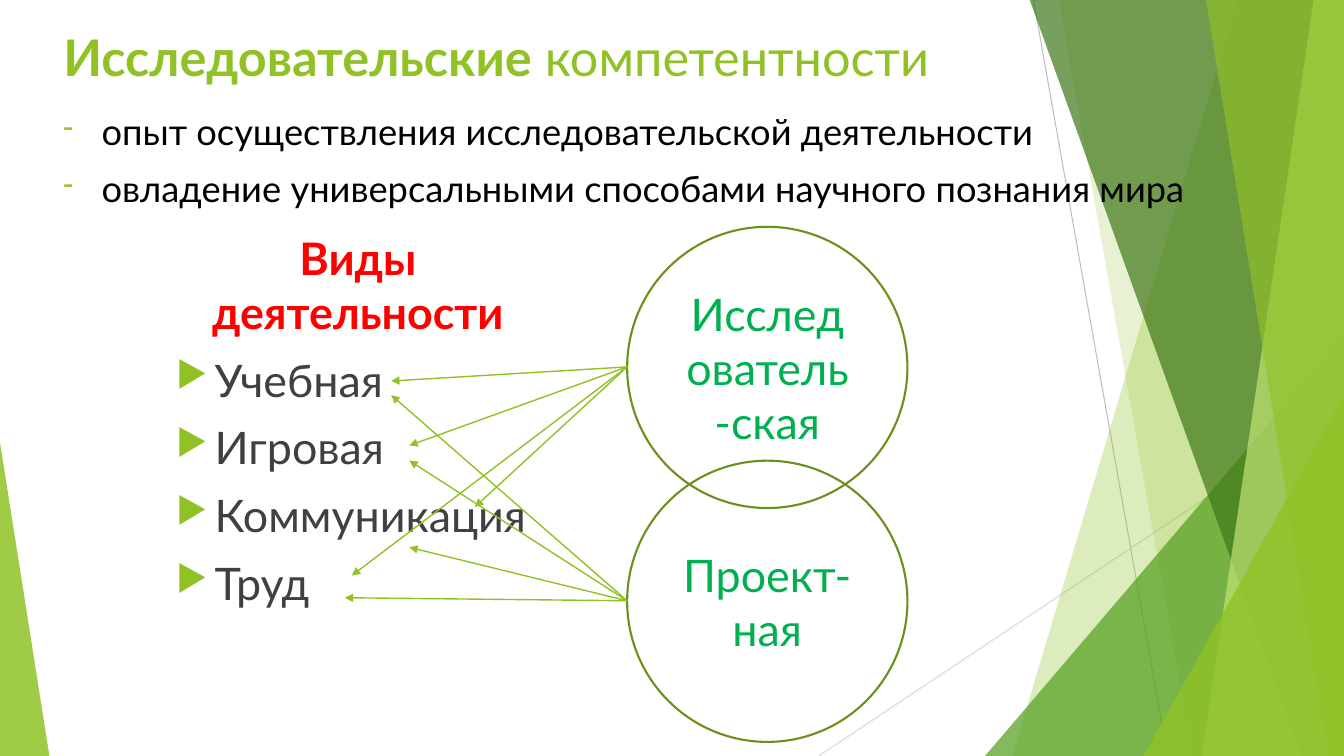
from dataclasses import dataclass

from lxml import etree
from pptx import Presentation
from pptx.dml.color import RGBColor
from pptx.enum.shapes import MSO_CONNECTOR, MSO_SHAPE
from pptx.enum.text import MSO_ANCHOR, PP_ALIGN
from pptx.oxml.ns import qn
from pptx.util import Pt

PX = 9144
WIDTH, HEIGHT = 1333, 750
STRAIGHT = MSO_CONNECTOR.STRAIGHT
TRIANGLE, ELLIPSE = MSO_SHAPE.RIGHT_TRIANGLE, MSO_SHAPE.OVAL
ISOSCELES = MSO_SHAPE.ISOSCELES_TRIANGLE
TOP, MIDDLE = MSO_ANCHOR.TOP, MSO_ANCHOR.MIDDLE
LEFT, CENTER = PP_ALIGN.LEFT, PP_ALIGN.CENTER


@dataclass(frozen=True)
class Theme:
    font: str = "Lato"
    lime: str = "90C226"
    green: str = "54A021"
    forest: str = "3F7819"
    pale: str = "C0E474"
    outline: str = "6B901C"
    emerald: str = "00B050"
    red: str = "FF0000"
    ink: str = "404040"
    black: str = "000000"
    gray: str = "BFBFBF"
    light_gray: str = "D9D9D9"
    title: float = 36
    body: float = 25.9
    large: float = 32
    gap: float = 10


THEME = Theme()


def box(*lengths):
    return [n * PX for n in lengths]


def add_child(parent, tag, **attrs):
    return etree.SubElement(parent, qn(tag), attrs)


def fill_shape(s, color, opacity):
    s.shadow.inherit = False
    s.line.fill.background()
    s.fill.solid()
    s.fill.fore_color.rgb = RGBColor.from_string(color)
    clr = s.fill._xPr.find(qn("a:solidFill"))[0]
    add_child(clr, "a:alpha", val=str(opacity * 1000))


def add_panel(slide, top_x, bottom_x, color, opacity):
    builder = slide.shapes.build_freeform(top_x, -1, PX)
    corners = [(WIDTH, -1), (WIDTH, HEIGHT), (bottom_x, HEIGHT)]
    builder.add_line_segments(corners, close=True)
    fill_shape(builder.convert_to_shape(), color, opacity)


def add_triangle(slide, x, y, w, apex, color, opacity):
    s = slide.shapes.add_shape(ISOSCELES, *box(x, y, w, HEIGHT - y))
    s.adjustments[0] = apex
    fill_shape(s, color, opacity)


def add_line(slide, start, end, color, width, arrow=False):
    c = slide.shapes.add_connector(STRAIGHT, *box(*start, *end))
    c.line.color.rgb = RGBColor.from_string(color)
    c.line.width = Pt(width)
    if arrow:
        add_child(c.line._get_or_add_ln(), "a:tailEnd", type="triangle")
    add_child(c._element.spPr, "a:effectLst")


def add_run(p, text, size, color, bold=False):
    r = p.add_run()
    r.text = text
    r.font.name = THEME.font
    r.font.size = Pt(size)
    r.font.bold = bold
    r.font.color.rgb = RGBColor.from_string(color)


def set_bullet(p, char):
    pPr = p._p.get_or_add_pPr()
    pPr.set("marL", str(38 * PX))
    pPr.set("indent", str(-38 * PX))
    add_child(add_child(pPr, "a:buClr"), "a:srgbClr", val=THEME.lime)
    add_child(pPr, "a:buSzPct", val="80000")
    add_child(pPr, "a:buChar", char=char)


def add_paragraph(tf, runs, size, align=LEFT, gap=0, bullet=None):
    p = tf.paragraphs[0]
    if p.runs:
        p = tf.add_paragraph()
    p.alignment = align
    p.space_before = Pt(gap)
    if bullet:
        set_bullet(p, bullet)
    for text, color, bold in runs:
        add_run(p, text, size, color, bold)


def add_text_box(slide, *lengths):
    tf = slide.shapes.add_textbox(*box(*lengths)).text_frame
    tf.word_wrap = True
    tf.vertical_anchor = TOP
    return tf


def add_circle(slide, x, y, text):
    s = slide.shapes.add_shape(ELLIPSE, *box(x, y, 278, 279))
    s.shadow.inherit = False
    s.fill.background()
    s.line.color.rgb = RGBColor.from_string(THEME.outline)
    s.line.width = Pt(1.5)
    tf = s.text_frame
    tf.word_wrap = True
    tf.vertical_anchor = MIDDLE
    add_paragraph(tf, [(text, THEME.emerald, False)], THEME.large, CENTER)


def draw_backdrop(slide):
    add_line(slide, (1025, 0), (1158, HEIGHT), THEME.gray, 0.75)
    add_line(slide, (WIDTH, 403), (812, HEIGHT), THEME.light_gray, 0.75)
    add_panel(slide, 1228, 1004, THEME.lime, 30)
    add_panel(slide, 1050, 1183, THEME.lime, 20)
    add_triangle(slide, 977, 333, 356, 1, THEME.green, 72)
    add_panel(slide, 1021, 1291, THEME.forest, 70)
    add_panel(slide, 1303, 1192, THEME.pale, 70)
    add_panel(slide, 1196, 1318, THEME.lime, 65)
    add_triangle(slide, 1134, 393, 199, 1, THEME.lime, 80)
    add_triangle(slide, 0, 439, 49, 0, THEME.lime, 85)


def draw_texts(slide):
    title = add_text_box(slide, 53, 21, 940, 83)
    add_paragraph(title, [("Исследовательские", THEME.lime, True),
                          (" компетентности", THEME.lime, False)], THEME.title)

    body = add_text_box(slide, 53, 103, 1156, 121)
    for text in ("опыт осуществления исследовательской деятельности",
                 "овладение универсальными способами научного познания мира"):
        add_paragraph(body, [(text, THEME.black, False)], THEME.body,
                      gap=THEME.gap, bullet="-")

    kinds = add_text_box(slide, 165, 224, 380, 424)
    add_paragraph(kinds, [("Виды деятельности", THEME.red, True)],
                  THEME.large, CENTER, THEME.gap)
    for text in ("Учебная", "Игровая", "Коммуникация", "Труд"):
        add_paragraph(kinds, [(text, THEME.ink, False)], THEME.large,
                      gap=THEME.gap, bullet="▶")


def draw_circles(slide):
    circles = [
        (225, "Исследователь-ская", [(388, 378), (406, 442), (471, 503), (349, 571)]),
        (457, "Проект-ная", [(388, 392), (406, 457), (406, 543), (342, 593)]),
    ]
    for y, text, _ in circles:
        add_circle(slide, 622, y, text)
    for y, _, targets in circles:
        for target in targets:
            add_line(slide, (622, y + 139), target, THEME.lime, 1, arrow=True)


def main():
    prs = Presentation()
    prs.slide_width, prs.slide_height = box(WIDTH, HEIGHT)
    slide = prs.slides.add_slide(prs.slide_layouts[6])
    draw_backdrop(slide)
    draw_texts(slide)
    draw_circles(slide)
    prs.save("out.pptx")


if __name__ == "__main__":
    main()
